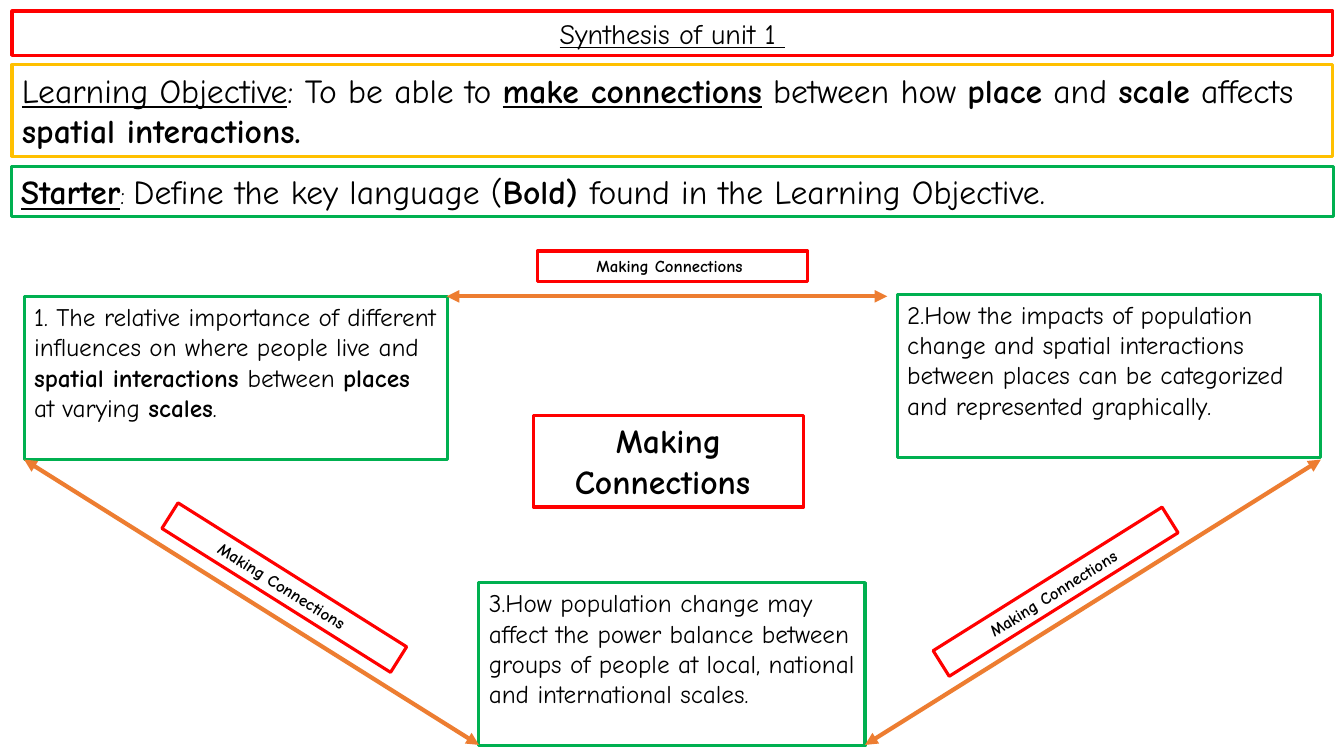
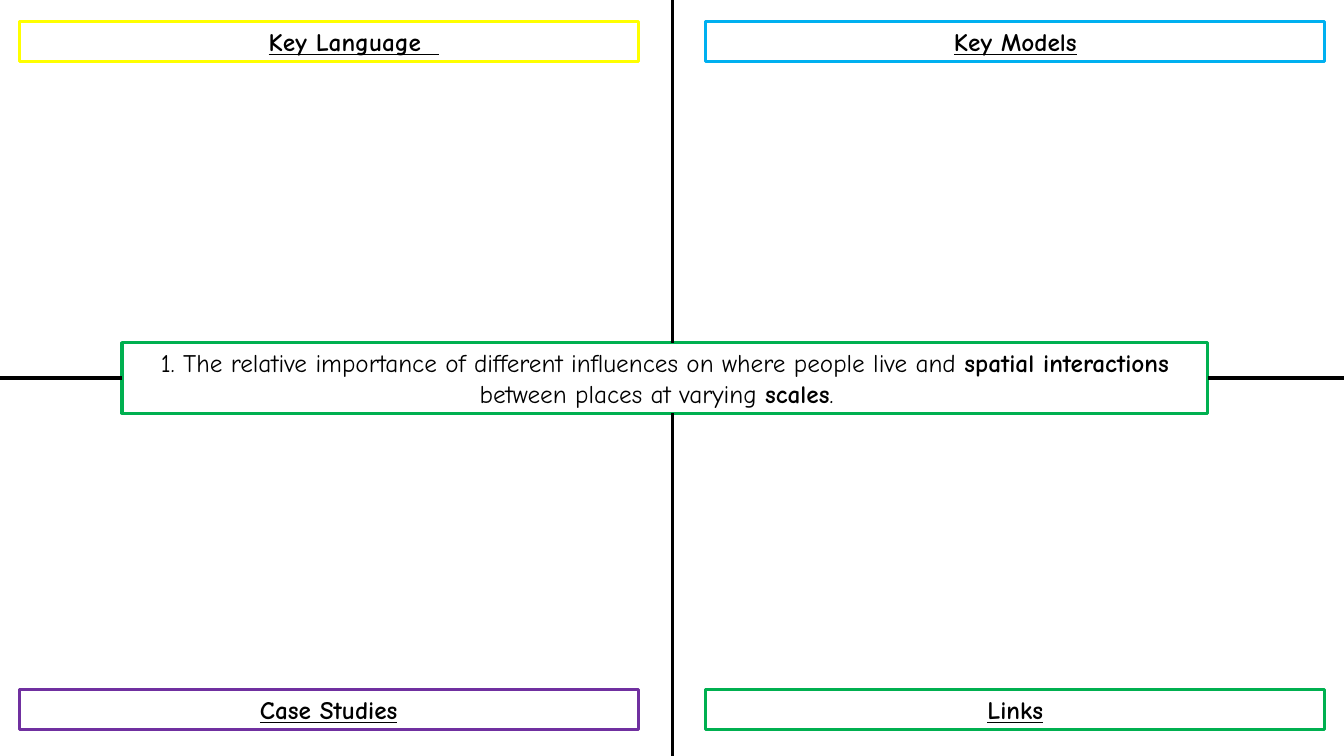
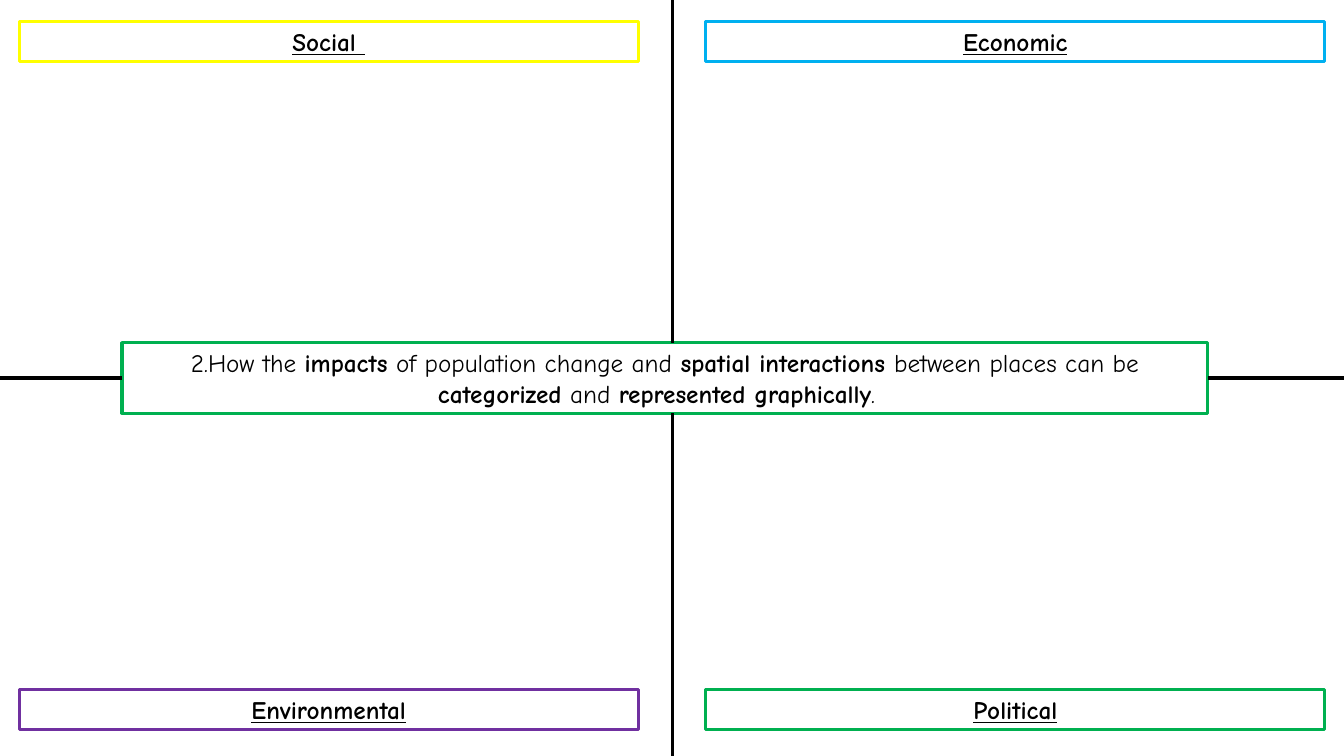
import pptx
import pptx.dml.color
import pptx.enum.shapes
import pptx.enum.text
import pptx.oxml
import pptx.oxml.ns
import pptx.util
from pptx.util import Inches

RGBColor = pptx.dml.color.RGBColor
WHITE = RGBColor(0xFF, 0xFF, 0xFF)
BLACK = RGBColor(0x00, 0x00, 0x00)
RED = RGBColor(0xFF, 0x00, 0x00)
GREEN = RGBColor(0x00, 0xB0, 0x50)
AMBER = RGBColor(0xFF, 0xC0, 0x00)
ORANGE = RGBColor(0xED, 0x7D, 0x31)
YELLOW = RGBColor(0xFF, 0xFF, 0x00)
BLUE = RGBColor(0x00, 0xB0, 0xF0)
PURPLE = RGBColor(0x70, 0x30, 0xA0)

FONT = "Comic Neue"
SLIDE_WIDTH, SLIDE_HEIGHT = 13.33, 7.5
CENTER = pptx.enum.text.PP_ALIGN.CENTER
LEFT = pptx.enum.text.PP_ALIGN.LEFT

BOLD = {"bold": True}
UNDERLINE = {"underline": True}
HEADING = {"bold": True, "underline": True}
SMALL = {"size": 18}

QUADRANT_COLORS = (YELLOW, BLUE, PURPLE, GREEN)
HEADING_LEFTS = (0.19, 7)
HEADING_TOPS = (0.21, 6.84)


def add_run(paragraph, text, size=18, bold=False, underline=False):
    run = paragraph.add_run()
    run.text = text
    run.font.name = FONT
    run.font.size = pptx.util.Pt(size)
    run.font.bold = bold
    run.font.underline = underline
    run.font.color.rgb = BLACK


def add_box(slide, position, color, runs, size=18, align=LEFT, rotation=0, indent=0):
    shape = slide.shapes.add_shape(
        pptx.enum.shapes.MSO_SHAPE.RECTANGLE, *(Inches(value) for value in position))
    shape.shadow.inherit = False
    shape.rotation = rotation
    shape.fill.solid()
    shape.fill.fore_color.rgb = WHITE
    shape.line.color.rgb = color
    shape.line.width = pptx.util.Pt(2.25)
    frame = shape.text_frame
    frame.word_wrap = True
    frame.vertical_anchor = pptx.enum.text.MSO_ANCHOR.TOP
    paragraph = frame.paragraphs[0]
    paragraph.alignment = align
    if indent:
        properties = paragraph._p.get_or_add_pPr()
        properties.set("marL", str(Inches(indent)))
        properties.set("indent", "0")
    for text, style in runs:
        add_run(paragraph, text, **{"size": size, **style})
    return shape


def add_line(slide, start, end, color, width, arrows=False):
    connector = slide.shapes.add_connector(
        pptx.enum.shapes.MSO_CONNECTOR.STRAIGHT,
        *(Inches(value) for value in (*start, *end)))
    connector.line.color.rgb = color
    connector.line.width = pptx.util.Pt(width)
    if arrows:
        line = connector.line._get_or_add_ln()
        for tag in ("a:headEnd", "a:tailEnd"):
            line.append(pptx.oxml.parse_xml(
                f'<{tag} {pptx.oxml.ns.nsdecls("a")} type="triangle"/>'))
    connector._element.spPr.append(
        pptx.oxml.parse_xml(f'<a:effectLst {pptx.oxml.ns.nsdecls("a")}/>'))
    return connector


def add_slide(presentation):
    return presentation.slides.add_slide(presentation.slide_layouts[6])


def add_synthesis_slide(presentation):
    slide = add_slide(presentation)
    add_box(slide, (0.12, 0.11, 13.1, 0.44), RED,
            [("Synthesis of unit 1 ", UNDERLINE)], size=20, align=CENTER)
    add_box(slide, (0.12, 0.64, 13.1, 0.91), AMBER, [
        ("Learning Objective", UNDERLINE), (": To be able to ", {}),
        ("make connections", HEADING), (" between how ", {}), ("place", BOLD),
        (" and ", {}), ("scale", BOLD), (" affects ", {}),
        ("spatial interactions.", BOLD)], size=24)
    add_box(slide, (0.11, 1.65, 13.12, 0.5), GREEN, [
        ("Starter", HEADING), (": ", SMALL), ("Define the key language (", {}),
        ("Bold) ", BOLD), ("found in the Learning Objective.", {})], size=24)

    add_box(slide, (0.24, 2.94, 4.2, 1.62), GREEN, [
        ("1. The relative importance of different influences on where people live and ", {}),
        ("spatial interactions ", BOLD), ("between ", {}), ("places", BOLD),
        (" at varying ", {}), ("scales", BOLD), (".", {})])
    add_box(slide, (8.9, 2.92, 4.2, 1.62), GREEN, [
        ("2.How the impacts of population change and spatial interactions between "
         "places can be categorized and represented graphically.", {})])
    add_box(slide, (4.75, 5.78, 3.83, 1.62), GREEN, [
        ("3.How population change may affect the power balance between groups of "
         "people at local, national and international scales.", {})])

    for start, end in (((4.43, 2.94), (8.8, 2.94)),
                       ((8.58, 7.39), (13.1, 4.56)),
                       ((0.24, 4.56), (4.75, 7.39))):
        add_line(slide, start, end, ORANGE, 3, arrows=True)

    for left, top, height, size, rotation in ((5.33, 2.49, 0.3, 12, 0),
                                              (9.13, 5.72, 0.3, 12, 327.9),
                                              (1.48, 5.68, 0.3, 12, 32.2),
                                              (5.29, 4.12, 0.91, 24, 0)):
        add_box(slide, (left, top, 2.68, height), RED, [("Making Connections ", BOLD)],
                size=size, align=CENTER, rotation=rotation)


def add_quadrant_slide(presentation, question, headings, first_indent=0):
    slide = add_slide(presentation)
    left, top, width, height = 1.21, 3.4, 10.77, 0.7
    middle_x, middle_y = 6.67, SLIDE_HEIGHT / 2
    question_box = add_box(slide, (left, top, width, height), GREEN, question, align=CENTER)
    add_line(slide, (middle_x, 0), (middle_x, top), BLACK, 2.25)
    add_line(slide, (middle_x, top + height), (middle_x, SLIDE_HEIGHT), BLACK, 2.25)
    for edge, side, site in ((0, left, 1), (SLIDE_WIDTH, left + width, 3)):
        divider = add_line(slide, (edge, middle_y), (side, middle_y), BLACK, 2.25)
        divider.end_connect(question_box, site)
    for index, (heading, color) in enumerate(zip(headings, QUADRANT_COLORS)):
        row, column = divmod(index, 2)
        add_box(slide, (HEADING_LEFTS[column], HEADING_TOPS[row], 6.14, 0.4), color,
                [(heading, HEADING)], align=CENTER,
                indent=0 if index else first_indent)


def main():
    presentation = pptx.Presentation()
    presentation.slide_width = Inches(SLIDE_WIDTH)
    presentation.slide_height = Inches(SLIDE_HEIGHT)
    add_synthesis_slide(presentation)
    add_quadrant_slide(presentation, [
        ("1. The relative importance of different influences on where people live and ", {}),
        ("spatial interactions ", BOLD), ("between places at varying ", {}),
        ("scales", BOLD), (".  ", {})],
        ("Key Language  ", "Key Models", "Case Studies", "Links"), first_indent=0.5)
    add_quadrant_slide(presentation, [
        ("2.How the ", {}), ("impacts", BOLD), (" of population change and ", {}),
        ("spatial interactions ", BOLD), ("between places can be ", {}),
        ("categorized", BOLD), (" and ", {}), ("represented graphically", BOLD),
        (".  ", {})],
        ("Social ", "Economic", "Environmental", "Political"))
    presentation.save("out.pptx")


if __name__ == "__main__":
    main()
